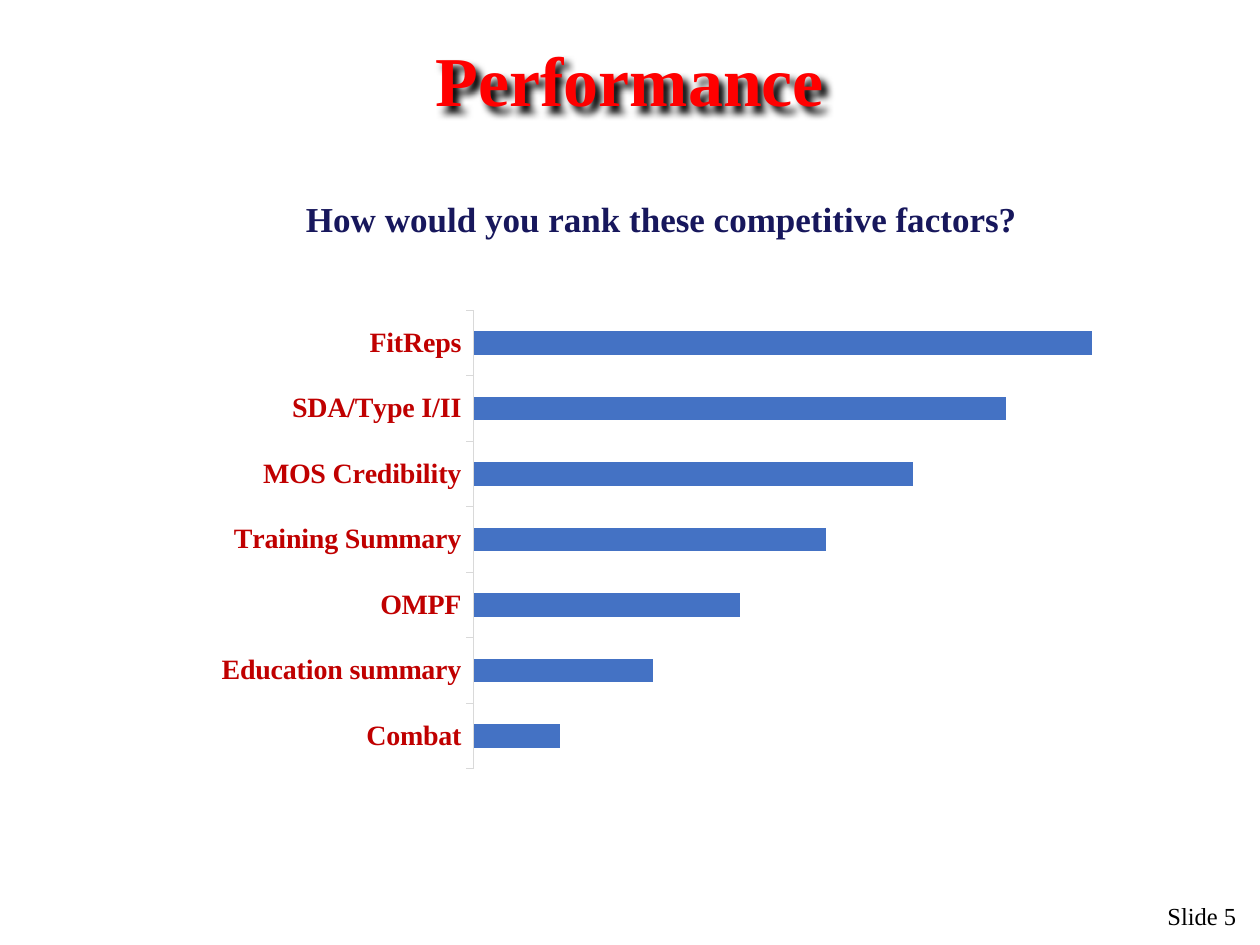
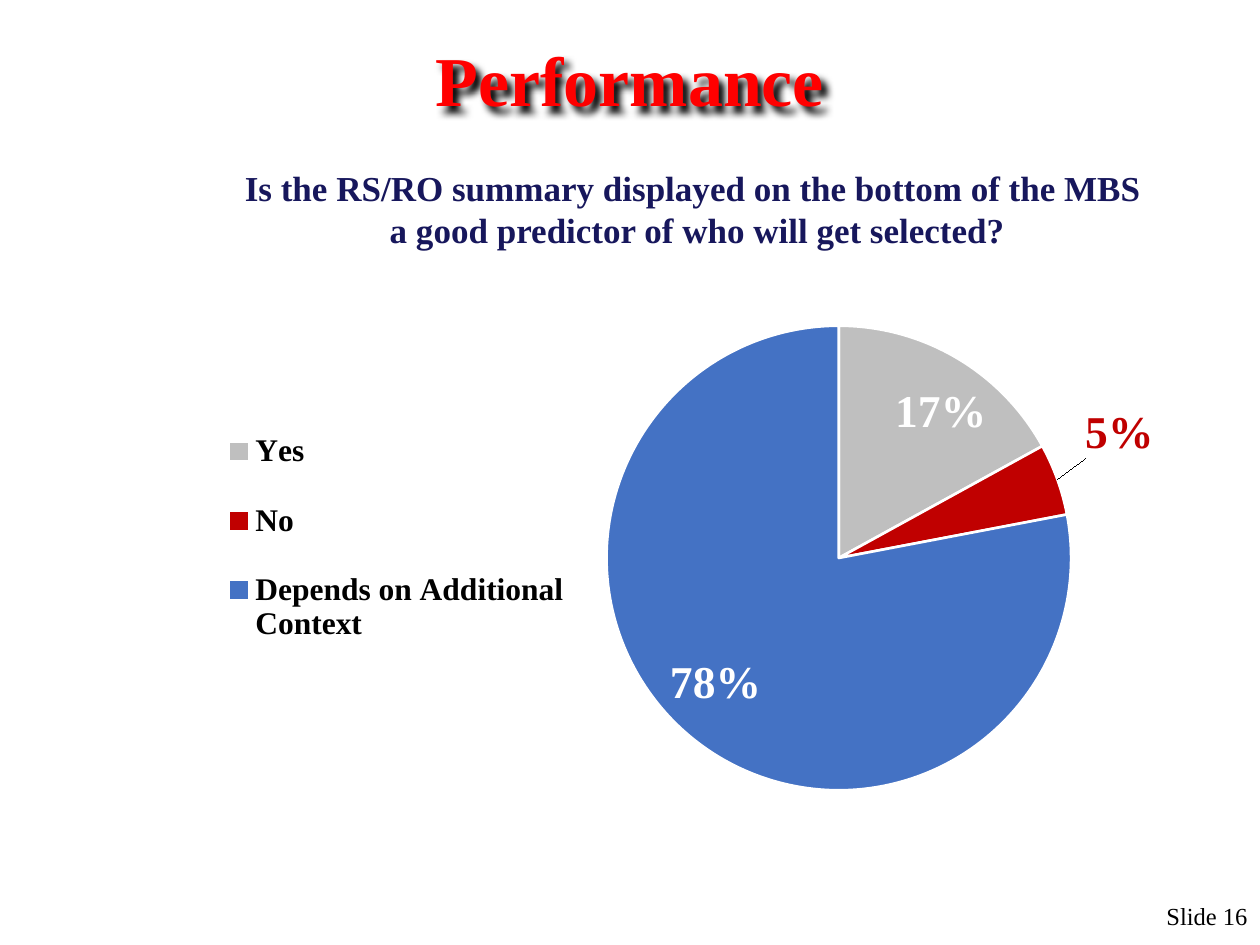
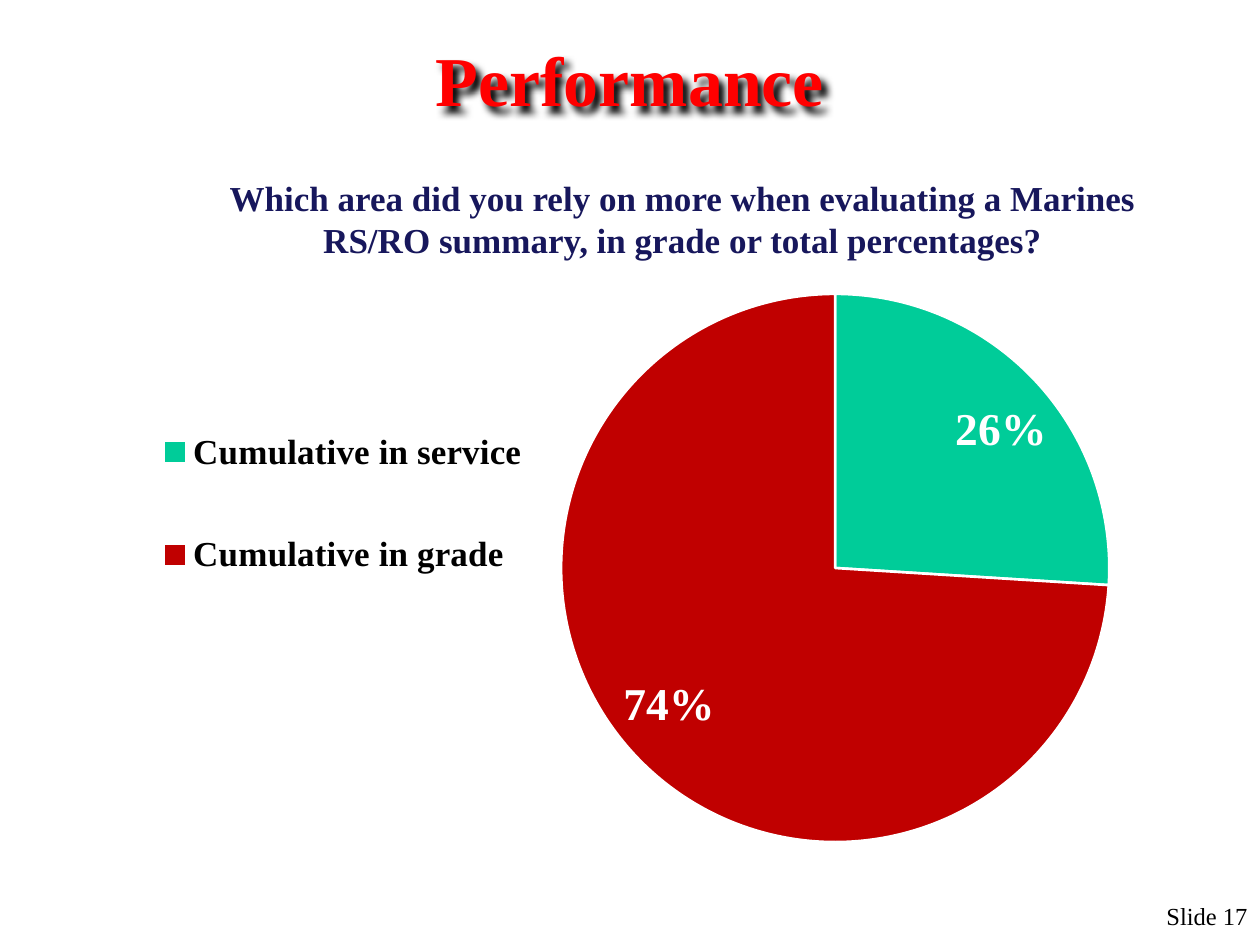
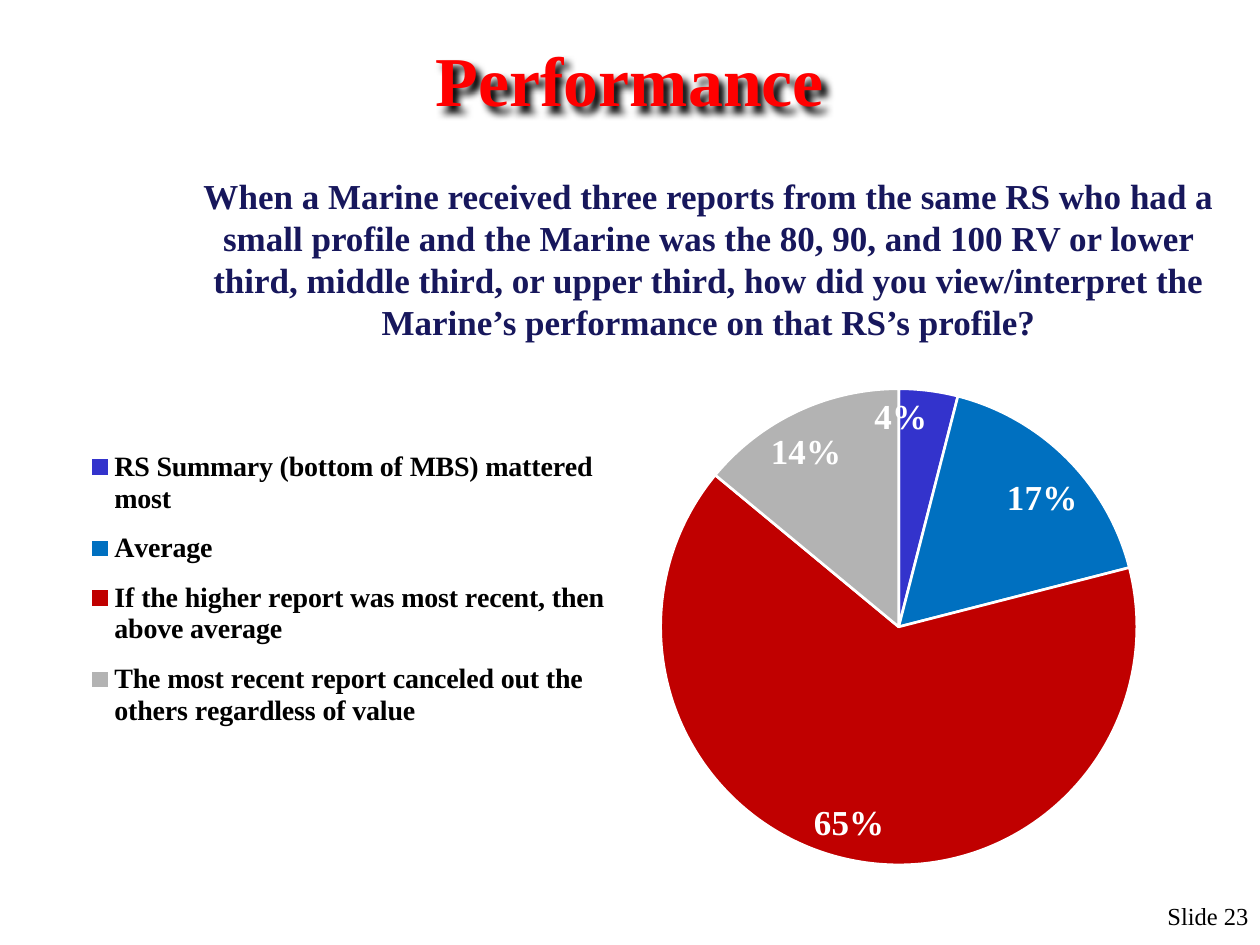
from lxml import etree
from pptx import Presentation
from pptx.chart.data import CategoryChartData
from pptx.dml.color import RGBColor
from pptx.enum.chart import XL_CHART_TYPE, XL_LABEL_POSITION, XL_LEGEND_POSITION, XL_TICK_MARK
from pptx.enum.text import MSO_ANCHOR, PP_ALIGN
from pptx.oxml import parse_xml
from pptx.oxml.ns import nsdecls, qn
from pptx.util import Inches, Pt

FONT = "Times New Roman"
BLACK = RGBColor(0x00, 0x00, 0x00)
WHITE = RGBColor(0xFF, 0xFF, 0xFF)
RED = RGBColor(0xFF, 0x00, 0x00)
CRIMSON = RGBColor(0xC0, 0x00, 0x00)
NAVY = RGBColor(0x17, 0x17, 0x5C)
BLUE = RGBColor(0x44, 0x72, 0xC4)
AZURE = RGBColor(0x00, 0x70, 0xC0)
INDIGO = RGBColor(0x33, 0x33, 0xCC)
GREEN = RGBColor(0x00, 0xCC, 0x99)
SILVER = RGBColor(0xBF, 0xBF, 0xBF)
GREY = RGBColor(0xB3, 0xB3, 0xB3)
PALE = RGBColor(0xD9, 0xD9, 0xD9)

WIDTH, HEIGHT = Inches(10), Inches(7.5)
COLS, ROWS = 120, 90

TITLE_OUTLINE = (f'<a:ln {nsdecls("a")} w="9525"><a:solidFill>'
                 '<a:srgbClr val="8E0000"/></a:solidFill></a:ln>')
TITLE_SHADOW = (f'<a:effectLst {nsdecls("a")}><a:outerShdw blurRad="50800" dist="50800" '
                'dir="2700000" algn="tl" rotWithShape="0"><a:srgbClr val="000000"/>'
                '</a:outerShdw></a:effectLst>')


def style(font, size, color, bold=True):
    font.name, font.size, font.bold = FONT, Pt(size), bold
    font.color.rgb = color


def layout(**shares):
    """Manual chart layout; shares are x, y, w, h of the chart."""
    el = etree.Element(qn("c:layout"))
    manual = etree.SubElement(el, qn("c:manualLayout"))
    if "w" in shares and shares.pop("inner", False):
        etree.SubElement(manual, qn("c:layoutTarget")).set("val", "inner")
    if "w" in shares:
        for axis in "xy":
            etree.SubElement(manual, qn(f"c:{axis}Mode")).set("val", "edge")
    for key, share in shares.items():
        etree.SubElement(manual, qn(f"c:{key}")).set("val", str(share))
    return el


def box_layout(box, inner=False):
    return layout(**dict(zip("xywh", box)), inner=inner)


class Deck:
    def __init__(self):
        self.prs = Presentation()
        self.prs.slide_width, self.prs.slide_height = WIDTH, HEIGHT
        self.s = None

    def place(self, box):
        left, top, width, height = box
        return (int(WIDTH * left / COLS), int(HEIGHT * top / ROWS),
                int(WIDTH * width / COLS), int(HEIGHT * height / ROWS))

    def slide(self, question, question_box, number, number_align=PP_ALIGN.LEFT):
        self.s = self.prs.slides.add_slide(self.prs.slide_layouts[6])
        self.title("Performance")
        self.text(question, question_box, 20, NAVY, PP_ALIGN.CENTER, spacing=Pt(24))
        left = 110 if number_align == PP_ALIGN.LEFT else 91.3
        self.text(f"Slide {number}", (left, 85.2, 28.7, 4.8), 14, BLACK, number_align, bold=False)

    def text(self, text, box, size, color, align, bold=True, spacing=None):
        sp = self.s.shapes.add_textbox(*self.place(box))
        tf = sp.text_frame
        tf.word_wrap = True
        tf.text = text
        for p in tf.paragraphs:
            p.alignment = align
            p.line_spacing = spacing
            for r in p.runs:
                style(r.font, size, color, bold)
        return sp

    def title(self, text):
        sp = self.text(text, (0, 4, 120, 7), 40, RED, PP_ALIGN.CENTER)
        sp.text_frame.vertical_anchor = MSO_ANCHOR.MIDDLE
        r = sp.text_frame.paragraphs[0].runs[0]
        r.font._element.insert(0, parse_xml(TITLE_OUTLINE))
        sp._element.spPr.append(parse_xml(TITLE_SHADOW))

    def chart(self, kind, box, plot_box, values, number_format):
        data = CategoryChartData(number_format=number_format)
        data.categories = list(values)
        data.add_series("Series 1", list(values.values()))
        chart = self.s.shapes.add_chart(kind, *self.place(box), data).chart
        chart.has_title = chart.has_legend = False
        chart.font.name, chart.font.size = "Arial", Pt(10)
        area = chart._chartSpace.chart.plotArea
        for old in area.findall(qn("c:layout")):
            area.remove(old)
        area.insert(0, box_layout(plot_box, inner=True))
        return chart

    def bars(self, box, plot_box, values, top_value):
        chart = self.chart(XL_CHART_TYPE.BAR_CLUSTERED, box, plot_box, values, "General")
        plot = chart.plots[0]
        plot.gap_width, plot.vary_by_categories = 182, False
        fill = plot.series[0].format.fill
        fill.solid()
        fill.fore_color.rgb = BLUE
        chart.value_axis.visible = False
        chart.value_axis.has_major_gridlines = False
        chart.value_axis.minimum_scale, chart.value_axis.maximum_scale = 0, top_value
        axis = chart.category_axis
        axis.major_tick_mark = XL_TICK_MARK.OUTSIDE
        axis.format.line.color.rgb, axis.format.line.width = PALE, Pt(0.75)
        style(axis.tick_labels.font, 16, CRIMSON)

    def pie(self, box, plot_box, legend_box, values, colors, legend_size, label_size):
        chart = self.chart(XL_CHART_TYPE.PIE, box, plot_box, values, "0%")
        chart.plots[0].vary_by_categories = True
        chart.has_legend = True
        legend = chart.legend
        legend.position, legend.include_in_layout = XL_LEGEND_POSITION.LEFT, False
        style(legend.font, legend_size, BLACK)
        legend._element.find(qn("c:legendPos")).addnext(box_layout(legend_box))
        series = chart.plots[0].series[0]
        for i, color in enumerate(colors):
            form = series.points[i].format
            form.fill.solid()
            form.fill.fore_color.rgb = color
            form.line.color.rgb, form.line.width = WHITE, Pt(1.5)
        labels = series.data_labels
        labels.show_value = True
        labels.number_format, labels.number_format_is_linked = "0%", False
        labels.position = XL_LABEL_POSITION.BEST_FIT
        style(labels.font, label_size, WHITE)
        return series

    def point_label(self, series, index, size, color, position, shift=None):
        """Style one label; shift moves it by shares of the chart."""
        label = series.points[index].data_label
        style(label.font, size, color)
        label.position = position
        if shift:
            idx = series._element.find(f".//{qn('c:dLbl')}/{qn('c:idx')}")
            idx.addnext(layout(x=shift[0], y=shift[1]))


def main():
    deck = Deck()

    deck.slide("How would you rank these competitive factors?", (14, 18.25, 98, 8.75), 5)
    factors = {"Combat": 14, "Education summary": 29, "OMPF": 43, "Training Summary": 57,
               "MOS Credibility": 71, "SDA/Type I/II": 86, "FitReps": 100}
    deck.bars((17, 15.5, 98, 74.4), (0.287, 0.189, 0.687, 0.587), factors, 114.3)

    deck.slide("Is the RS/RO summary displayed on the bottom of the MBS\n"
               " a good predictor of who will get selected?",
               (17, 15.25, 98, 8.75), 16, PP_ALIGN.RIGHT)
    predictor = deck.pie((15, 24.25, 99, 57.4), (0.432, 0.1, 0.447, 0.807),
                         (0.05, 0.24, 0.36, 0.46),
                         {"Yes": 0.17, "No": 0.05, "Depends on Additional Context": 0.78},
                         (SILVER, CRIMSON, BLUE), 18, 26)
    deck.point_label(predictor, 1, 26, CRIMSON, XL_LABEL_POSITION.OUTSIDE_END, (0.02, -0.03))

    deck.slide("Which area did you rely on more when evaluating a Marines RS/RO summary, "
               "in grade or total percentages?", (16, 16.2, 98, 8.75), 17, PP_ALIGN.RIGHT)
    deck.pie((7, 26.25, 107, 55.7), (0.434, 0.03, 0.488, 0.94), (0.06, 0.16, 0.36, 0.46),
             {"Cumulative in service": 0.26, "Cumulative in grade": 0.74},
             (GREEN, CRIMSON), 20, 26)

    deck.slide("When a Marine received three reports from the same RS who had a small profile "
               "and the Marine was the 80, 90, and 100 RV or lower third, middle third, or upper "
               "third, how did you view/interpret the Marine’s performance on that RS’s profile?",
               (17, 16, 101, 8.75), 23)
    views = {"RS Summary (bottom of MBS) mattered most": 0.04,
             "Average": 0.17,
             "If the higher report was most recent, then above average": 0.65,
             "The most recent report canceled out the others regardless of value": 0.14}
    reports = deck.pie((3.5, 34, 121, 56), (0.491, 0.054, 0.375, 0.81),
                       (0.03, 0.13, 0.43, 0.53), views, (INDIGO, AZURE, CRIMSON, GREY), 16, 20)
    deck.point_label(reports, 0, 20, WHITE, XL_LABEL_POSITION.INSIDE_END)

    deck.prs.save("out.pptx")


if __name__ == "__main__":
    main()
